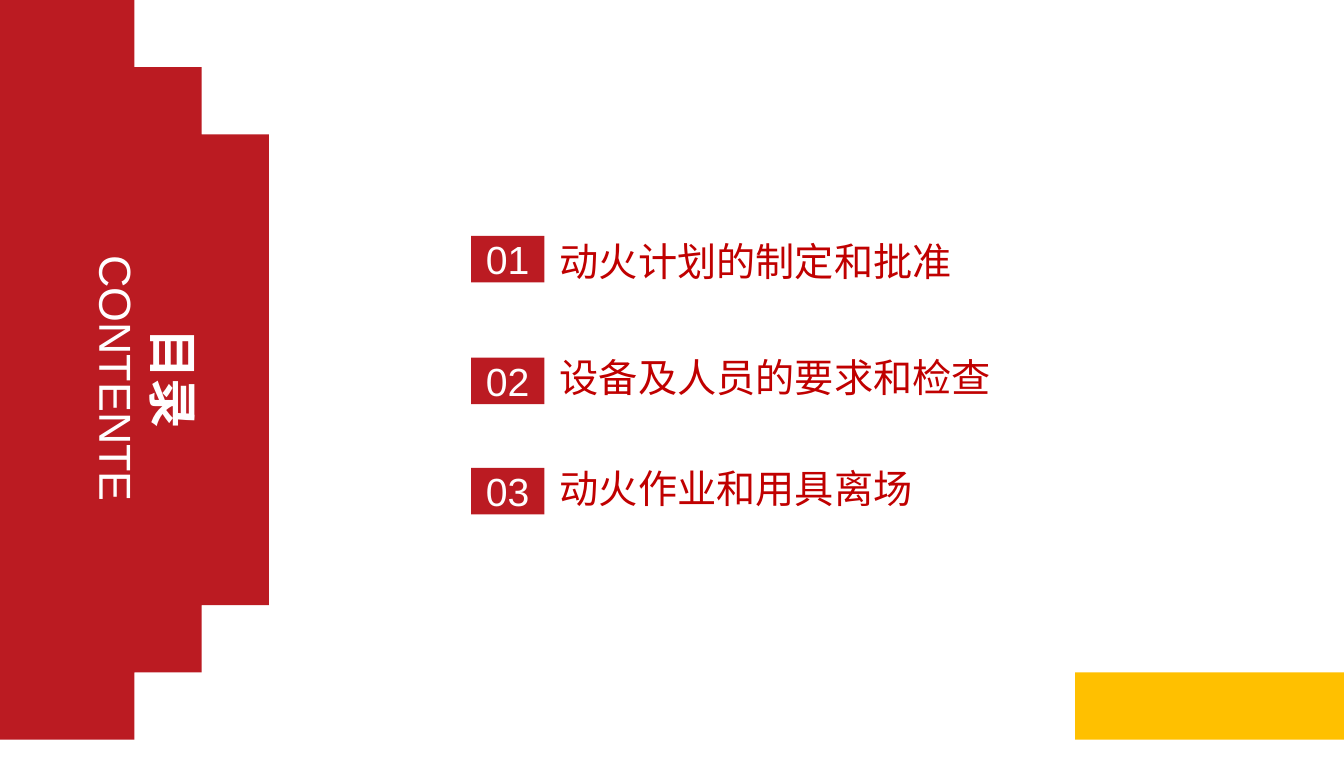
"""Build the contents slide for a hot-work safety deck."""
from pptx import Presentation
from pptx.dml.color import RGBColor
from pptx.enum import shapes, text
from pptx.oxml import ns
from pptx.util import Inches, Pt

RED = RGBColor(0xBB, 0x1B, 0x22)
DARK_RED = RGBColor(0xC0, 0x00, 0x00)
AMBER = RGBColor(0xFF, 0xC0, 0x00)
WHITE = RGBColor(0xFF, 0xFF, 0xFF)
LATIN_FONT = "Arial"
CHINESE_FONT = "Noto Sans CJK SC"
ENTRIES = (
    ("01", 3.51, "动火计划的制定和批准", 3.48, 6.09),
    ("02", 5.32, "设备及人员的要求和检查", 5.21, 6.68),
    ("03", 6.96, "动火作业和用具离场", 6.86, 5.5),
)


def curve(start, control_1, control_2, end, steps=40):
    """Return points along a cubic curve, without its start."""
    points = []
    for step in range(1, steps + 1):
        t = step / steps
        weights = ((1 - t) ** 3, 3 * t * (1 - t) ** 2, 3 * t * t * (1 - t), t ** 3)
        corners = (start, control_1, control_2, end)
        points.append(tuple(sum(w * corner[axis] for w, corner in zip(weights, corners))
                            for axis in (0, 1)))
    return points


def fill_shape(shape, color):
    """Give a shape a plain fill without line or shadow."""
    shape.shadow.inherit = False
    shape.fill.solid()
    shape.fill.fore_color.rgb = color
    shape.line.fill.background()


def add_outline(slide, points, color):
    """Add a filled closed outline through points given in inches."""
    builder = slide.shapes.build_freeform(*points[0], scale=Inches(1))
    builder.add_line_segments(points[1:], close=True)
    fill_shape(builder.convert_to_shape(), color)


def write_text(paragraph, content, *, size=42, color=WHITE, font=LATIN_FONT,
               bold=False, align=text.PP_ALIGN.CENTER):
    """Write one formatted run into a paragraph."""
    paragraph.alignment = align
    paragraph.line_spacing = 1.0
    run = paragraph.add_run()
    run.text = content
    run.font.size = Pt(size)
    run.font.bold = bold
    run.font.color.rgb = color
    run.font.name = font
    east_asian = run.font._element.makeelement(ns.qn("a:ea"), {"typeface": CHINESE_FONT})
    run.font._element.find(ns.qn("a:latin")).addnext(east_asian)


def add_title(slide):
    """Place the two-line title along the side panel."""
    title = slide.shapes.title
    title.left, title.top = Inches(0.04), Inches(4.72)
    title.width, title.height = Inches(4.29), Inches(1.82)
    title.rotation = 90
    frame = title.text_frame
    frame.auto_size = text.MSO_AUTO_SIZE.NONE
    frame.vertical_anchor = text.MSO_ANCHOR.TOP
    write_text(frame.paragraphs[0], "目录", size=54, bold=True)
    write_text(frame.add_paragraph(), "CONTENTE", size=48)


def add_entry(slide, number, tile_top, label, label_top, label_width):
    """Add a numbered tile and the chapter name beside it."""
    box = slide.shapes.add_textbox(
        Inches(8.23), Inches(label_top), Inches(label_width), Inches(0.81))
    box.text_frame.word_wrap = False
    write_text(box.text_frame.paragraphs[0], label, color=DARK_RED,
               font=CHINESE_FONT, align=text.PP_ALIGN.LEFT)
    tile = slide.shapes.add_shape(
        shapes.MSO_SHAPE.RECTANGLE,
        Inches(7.01), Inches(tile_top), Inches(1.09), Inches(0.69))
    fill_shape(tile, RED)
    tile.text_frame.vertical_anchor = text.MSO_ANCHOR.MIDDLE
    write_text(tile.text_frame.paragraphs[0], number)


def main():
    """Build and save the slide."""
    presentation = Presentation()
    presentation.slide_width, presentation.slide_height = Inches(20), Inches(11.26)
    slide = presentation.slides.add_slide(presentation.slide_layouts[5])

    upper = curve((2.5, 1.26), (2.89, 2.16), (3.94, 1.75), (3.93, 2.78))
    lower = curve((3.93, 8.48), (3.93, 9.56), (2.92, 9.07), (2.5, 10.01))
    add_outline(slide, [(0, 0.01), (2.5, 0.01), (2.5, 1.26), *upper,
                        (3.93, 8.48), *lower, (2.5, 11.26), (0, 11.26)], RED)
    panel = slide.shapes[-1]
    slide.shapes.title._element.addprevious(panel._element)
    add_title(slide)
    for entry in ENTRIES:
        add_entry(slide, *entry)
    corner = curve((15.87, 11.26), (16.52, 10.97), (16.18, 10.28), (16.93, 10.28))
    add_outline(slide, [(20, 10.28), (20, 11.26), (15.87, 11.26), *corner], AMBER)
    presentation.save("out.pptx")


if __name__ == "__main__":
    main()
